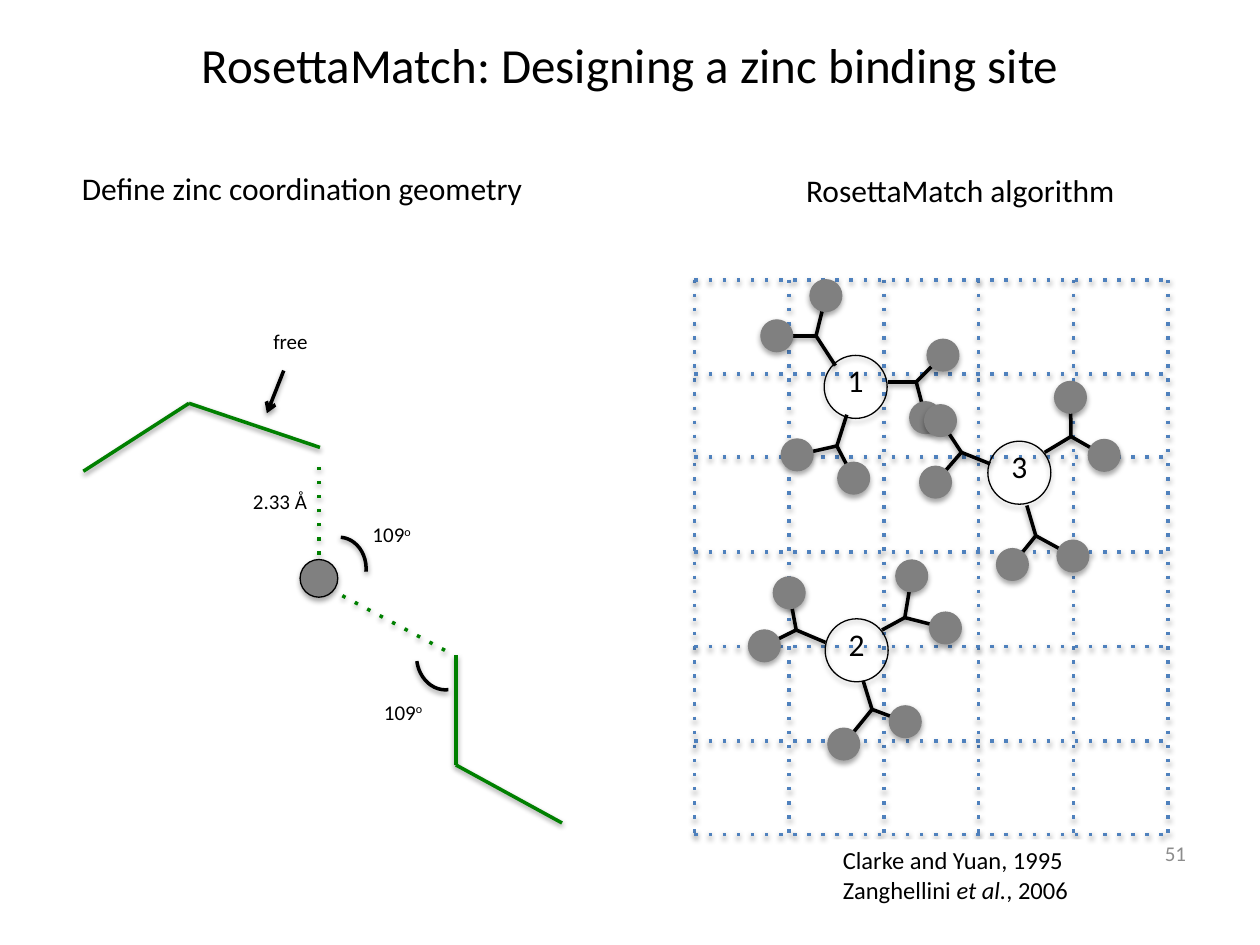
import pptx
import pptx.dml.color
import pptx.enum.shapes
import pptx.enum.text
import pptx.oxml.ns
import pptx.util
from lxml import etree

Cm = pptx.util.Cm
Pt = pptx.util.Pt
qn = pptx.oxml.ns.qn
SHAPES = pptx.enum.shapes.MSO_SHAPE
ALIGN = pptx.enum.text.PP_ALIGN
ANCHOR = pptx.enum.text.MSO_ANCHOR

BLACK, WHITE, GREY, GREEN, BLUE = "000000", "FFFFFF", "808080", "008000", "4F81BD"
PAGE_GREY = "8C8C8C"

GRID_LEFT, COLUMN_WIDTH, COLUMN_COUNT = 14.0, 1.91, 5
GRID_ROWS = [5.64, 7.54, 9.21, 11.13, 13.03, 14.94, 16.82]

# Centre of each numbered backbone position
POSITIONS = {"1": (17.25, 7.8), "2": (17.27, 13.11), "3": (20.55, 9.53)}

# Side chains: anchor on the ring, branching joint, two end atoms
SIDE_CHAINS = [
    ((16.84, 7.37), (16.45, 6.77), (15.66, 6.77), (16.65, 5.96)),
    ((17.07, 8.36), (16.87, 8.99), (17.21, 9.64), (16.07, 9.17)),
    ((17.91, 7.7), (18.47, 7.7), (19.01, 7.16), (18.66, 8.42)),
    ((19.96, 9.35), (19.38, 9.12), (18.86, 9.72), (18.96, 8.48)),
    ((17.4, 13.72), (17.58, 14.3), (18.25, 14.55), (17.01, 15.0)),
    ((16.64, 12.95), (16.05, 12.7), (15.41, 13.02), (15.91, 11.95)),
    ((20.7, 10.19), (20.88, 10.8), (21.63, 11.21), (20.41, 11.38)),
    ((17.78, 12.7), (18.24, 12.45), (18.38, 11.61), (19.06, 12.66)),
    ((21.06, 9.12), (21.59, 8.8), (21.58, 8.01), (22.26, 9.18)),
]


def color(hex_string):
    return pptx.dml.color.RGBColor.from_string(hex_string)


def add_shadow(shape, distance, opacity):
    """Give a shape, whose line is already set, a soft shadow straight below."""
    properties = shape.element.spPr
    effects = properties.find(qn("a:effectLst"))
    if effects is None:
        effects = etree.SubElement(properties, qn("a:effectLst"))
    shadow = etree.SubElement(effects, qn("a:outerShdw"), blurRad=str(Pt(3.1)),
                              dist=str(Pt(distance)), dir="5400000", rotWithShape="0")
    shade = etree.SubElement(shadow, qn("a:srgbClr"), val=BLACK)
    etree.SubElement(shade, qn("a:alpha"), val=str(opacity * 1000))


class SlideBuilder:
    font = "Calibri"
    line_width = 2
    outline_width = 0.75

    def __init__(self, slide):
        self.slide = slide

    def style_runs(self, paragraph, size, text_color):
        for run in paragraph.runs:
            run.font.name = self.font
            run.font.size = Pt(size)
            run.font.color.rgb = color(text_color)

    def title(self, text):
        title = self.slide.shapes.title
        title.left, title.top, title.width, title.height = Cm(0), Cm(0), Cm(25.4), Cm(2.59)
        title.text_frame.text = text
        title.text_frame.vertical_anchor = ANCHOR.MIDDLE
        paragraph = title.text_frame.paragraphs[0]
        paragraph.alignment = ALIGN.CENTER
        self.style_runs(paragraph, 28, BLACK)

    def text(self, x, y, width, height, text, size, text_color=BLACK, wrap=False):
        box = self.slide.shapes.add_textbox(Cm(x), Cm(y), Cm(width), Cm(height))
        frame = box.text_frame
        frame.text = text
        frame.word_wrap = wrap
        frame.auto_size = pptx.enum.text.MSO_AUTO_SIZE.SHAPE_TO_FIT_TEXT
        for paragraph in frame.paragraphs:
            self.style_runs(paragraph, size, text_color)
        return box

    def append_run(self, paragraph, text, size):
        run = paragraph.add_run()
        run.text = text
        self.style_runs(paragraph, size, BLACK)
        return run

    def angle_label(self, x, y):
        box = self.text(x, y, 1.7, 0.76, "109", 12, wrap=True)
        degree = self.append_run(box.text_frame.paragraphs[0], "o", 12)
        degree.font._element.set("baseline", "30000")

    def line(self, start, end, line_color, dotted=False, arrow=False):
        connector = self.slide.shapes.add_connector(
            pptx.enum.shapes.MSO_CONNECTOR.STRAIGHT, *[Cm(value) for value in start + end])
        connector.line.color.rgb = color(line_color)
        connector.line.width = Pt(self.line_width)
        outline = connector.element.spPr.find(qn("a:ln"))
        if dotted:
            etree.SubElement(outline, qn("a:prstDash"), val="dot")
        if arrow:
            etree.SubElement(outline, qn("a:tailEnd"), type="arrow")
        add_shadow(connector, 1.6, 38)

    def chain(self, points, line_color):
        for start, end in zip(points, points[1:]):
            self.line(start, end, line_color)

    def circle(self, center, diameter, line_color, fill_color=None):
        x, y = center
        circle = self.slide.shapes.add_shape(
            SHAPES.OVAL, Cm(x - diameter / 2), Cm(y - diameter / 2), Cm(diameter), Cm(diameter))
        if fill_color:
            circle.fill.solid()
            circle.fill.fore_color.rgb = color(fill_color)
        else:
            circle.fill.background()
        circle.line.color.rgb = color(line_color)
        circle.line.width = Pt(self.outline_width)
        circle.shadow.inherit = False
        add_shadow(circle, 1.8, 35)

    def angle_arc(self, x, y, rotation):
        arc = self.slide.shapes.add_shape(SHAPES.ARC, Cm(x), Cm(y), Cm(1.3), Cm(1.12))
        arc.rotation = rotation
        arc.element.spPr.find(qn("a:xfrm")).set("flipV", "1")
        arc.fill.background()
        arc.line.color.rgb = color(BLACK)
        arc.line.width = Pt(self.line_width)
        arc.shadow.inherit = False
        add_shadow(arc, 1.6, 38)

    def grid(self):
        columns = [GRID_LEFT + COLUMN_WIDTH * i for i in range(COLUMN_COUNT + 1)]
        for x in columns:
            self.line((x, GRID_ROWS[0]), (x, GRID_ROWS[-1]), BLUE, dotted=True)
        for y in GRID_ROWS:
            self.line((columns[0], y), (columns[-1], y), BLUE, dotted=True)

    def side_chain(self, anchor, joint, *atoms):
        self.line(anchor, joint, BLACK)
        for atom in atoms:
            self.line(joint, atom, BLACK)
        for atom in atoms:
            self.circle(atom, 0.64, GREY, GREY)


def draw_match_algorithm(builder):
    builder.text(16, 3.33, 7.29, 1.02, "RosettaMatch algorithm", 18)
    builder.grid()
    for label, (x, y) in POSITIONS.items():
        builder.circle((x, y), 1.27, BLACK)
        builder.text(x - 0.41, y - 0.64, 0.86, 1.02, label, 18)
    for side_chain in SIDE_CHAINS:
        builder.side_chain(*side_chain)

    references = builder.text(16.74, 16.92, 5.11, 1.45,
                              "Clarke and Yuan, 1995\nZanghellini ", 14)
    references.fill.solid()
    references.fill.fore_color.rgb = color(WHITE)
    paragraph = references.text_frame.paragraphs[1]
    builder.append_run(paragraph, "et al.", 14).font.italic = True
    builder.append_run(paragraph, ", 2006", 14)


def draw_zinc_geometry(builder):
    builder.text(1.4, 3.28, 10.21, 1.02, "Define zinc coordination geometry", 18)
    builder.chain([(1.68, 9.5), (3.81, 8.13), (6.45, 9.02)], GREEN)
    builder.chain([(9.19, 13.21), (9.19, 15.42), (11.33, 16.59)], GREEN)
    builder.line((8.97, 13.11), (6.81, 11.96), GREEN, dotted=True)
    builder.line((6.43, 11.18), (6.43, 9.37), GREEN, dotted=True)
    builder.circle((6.43, 11.66), 0.76, BLACK, GREY)
    builder.text(4.85, 9.73, 2.13, 0.76, "2.33 Å", 12, wrap=True)
    builder.text(5.26, 6.5, 2.03, 0.76, "free", 12, wrap=True)
    builder.line((5.72, 7.47), (5.38, 8.33), BLACK, arrow=True)
    builder.angle_arc(6.17, 10.92, 274.4)
    builder.angle_label(7.26, 10.39)
    builder.angle_arc(8.31, 12.7, 82.9)
    builder.angle_label(7.49, 13.97)


def main():
    presentation = pptx.Presentation()
    presentation.slide_width, presentation.slide_height = Cm(25.4), Cm(19.05)
    builder = SlideBuilder(presentation.slides.add_slide(presentation.slide_layouts[5]))
    builder.title("RosettaMatch: Designing a zinc binding site")
    draw_match_algorithm(builder)
    draw_zinc_geometry(builder)
    number = builder.text(18.24, 16.69, 5.92, 1.02, "51", 12, PAGE_GREY, wrap=True)
    number.text_frame.auto_size = pptx.enum.text.MSO_AUTO_SIZE.NONE
    number.text_frame.vertical_anchor = ANCHOR.MIDDLE
    number.text_frame.paragraphs[0].alignment = ALIGN.RIGHT
    presentation.save("out.pptx")


if __name__ == "__main__":
    main()
